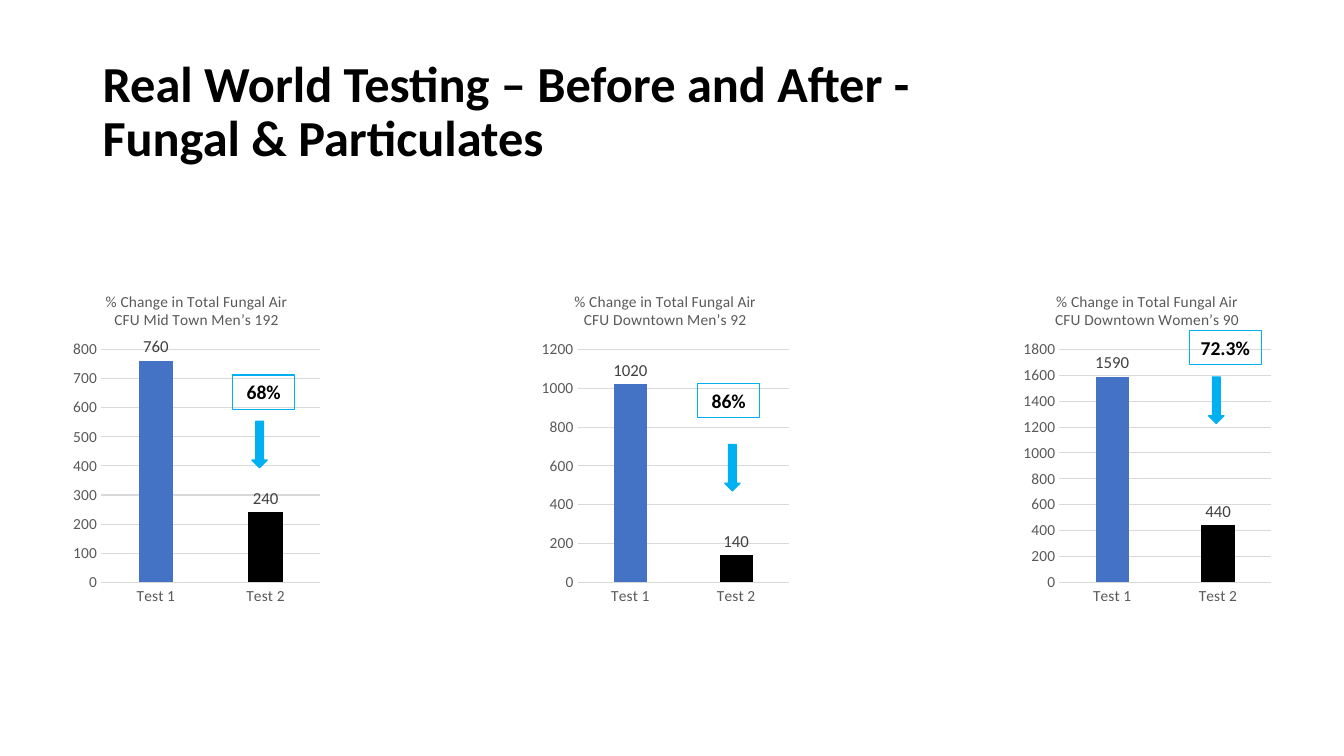
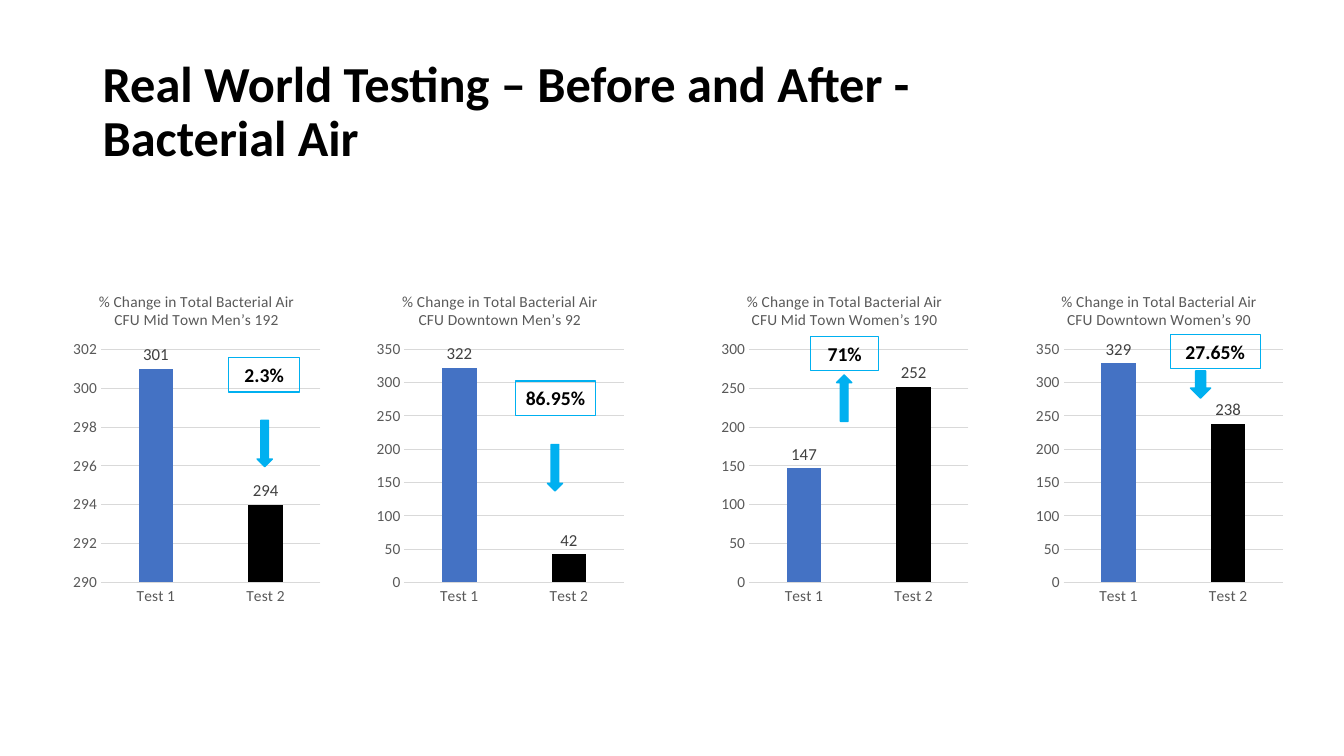
from dataclasses import dataclass

from lxml.etree import SubElement
from pptx import Presentation
from pptx.chart.data import CategoryChartData
from pptx.dml.color import RGBColor
from pptx.enum.chart import XL_CHART_TYPE, XL_LABEL_POSITION, XL_TICK_MARK
from pptx.enum.shapes import MSO_SHAPE
from pptx.enum.text import MSO_ANCHOR, PP_ALIGN
from pptx.oxml.ns import qn
from pptx.util import Inches, Pt

SLIDE_WIDTH, SLIDE_HEIGHT = Inches(13.33), Inches(7.5)
FONT = "Calibri"
BLACK = RGBColor(0x00, 0x00, 0x00)
BLUE = RGBColor(0x44, 0x72, 0xC4)
CYAN = RGBColor(0x00, 0xB0, 0xF0)
GRAY = RGBColor(0x59, 0x59, 0x59)
DARK_GRAY = RGBColor(0x40, 0x40, 0x40)
GRID_GRAY = RGBColor(0xD9, 0xD9, 0xD9)

CHART_TOP, CHART_WIDTH, CHART_HEIGHT = 36.4, 19.2, 44.67
BADGE_HEIGHT = 4.53


@dataclass
class Test:
    """One before-and-after chart; places are percentages of the slide."""

    site: str
    left: float
    counts: tuple
    scale: tuple
    change: str
    badge: tuple
    arrow: tuple
    arrow_size: tuple = (1.13, 6.13)
    rising: bool = False


FUNGAL = (
    Test("Mid Town Men’s 192", 5.03, (760, 240), (0, 800, 100),
         "68%", (17.33, 49.6, 4.58), (18.75, 55.73)),
    Test("Downtown Men’s 92", 39.9, (1020, 140), (0, 1200, 200),
         "86%", (51.9, 50.67, 4.65), (53.93, 58.8)),
    Test("Downtown Women’s 90", 75.75, (1590, 440), (0, 1800, 200),
         "72.3%", (88.5, 43.73, 5.33), (89.93, 49.87)),
)
BACTERIAL = (
    Test("Mid Town Men’s 192", 5.03, (301, 294), (290, 302, 2),
         "2.3%", (17.03, 47.33, 5.25), (19.13, 55.6)),
    Test("Downtown Men’s 92", 27.6, (322, 42), (0, 350, 50),
         "86.95%", (38.33, 50.4, 6), (40.73, 58.8)),
    Test("Mid Town Women’s 190", 53.25, (147, 252), (0, 300, 50),
         "71%", (60.3, 44.53, 5.1), (62.25, 49.6), rising=True),
    Test("Downtown Women’s 90", 76.65, (329, 238), (0, 350, 50),
         "27.65%", (87.08, 44.27, 6.68), (88.58, 49.07), (1.5, 3.6)),
)
SLIDES = (
    ("Fungal & Particulates", "Fungal", FUNGAL),
    ("Bacterial Air", "Bacterial", BACTERIAL),
)


def area(left, top, width, height):
    """Turn percentages of the slide into lengths."""
    return (int(SLIDE_WIDTH * left / 100), int(SLIDE_HEIGHT * top / 100),
            int(SLIDE_WIDTH * width / 100), int(SLIDE_HEIGHT * height / 100))


def set_all(target, values):
    """Set each named attribute of the target."""
    for name, value in values.items():
        setattr(target, name, value)


def style_font(font, size, color, bold=False):
    """Give a font the deck's typeface, a size and a colour."""
    set_all(font, {"name": FONT, "size": Pt(size), "bold": bold})
    font.color.rgb = color


def style_line(line, color, width):
    """Give a line its colour and width."""
    line.color.rgb = color
    line.width = Pt(width)


def add_title(slide, topic):
    """Write the slide's heading."""
    heading = slide.shapes.add_textbox(*area(6.9, 5.33, 69, 19.33)).text_frame
    set_all(heading, {"word_wrap": True, "vertical_anchor": MSO_ANCHOR.MIDDLE})
    line = heading.paragraphs[0]
    line.text = f"Real World Testing – Before and After - {topic}"
    line.line_spacing = 0.9
    style_font(line.font, 36, BLACK, True)


def fix_plot_area(chart, left):
    """Pin the inner plot area, in shares of the chart."""
    plot_area = chart.plots[0]._element.getparent()
    for old in plot_area.findall(qn("c:layout")):
        plot_area.remove(old)
    layout = SubElement(plot_area, qn("c:layout"))
    plot_area.insert(0, layout)
    manual = SubElement(layout, qn("c:manualLayout"))
    settings = {"layoutTarget": "inner", "xMode": "edge", "yMode": "edge",
                "x": left, "y": 0.22, "w": round(0.98 - left, 2), "h": 0.69}
    for tag, value in settings.items():
        SubElement(manual, qn(f"c:{tag}")).set("val", str(value))


def style_axes(chart, scale):
    """Format both axes and set the value scale."""
    categories, values = chart.category_axis, chart.value_axis
    for axis in (categories, values):
        set_all(axis, {"major_tick_mark": XL_TICK_MARK.NONE,
                       "minor_tick_mark": XL_TICK_MARK.NONE})
        style_font(axis.tick_labels.font, 11, GRAY)
    low, high, step = scale
    set_all(values, {"minimum_scale": low, "maximum_scale": high,
                     "major_unit": step, "has_major_gridlines": True})
    style_line(categories.format.line, GRID_GRAY, 0.75)
    style_line(values.major_gridlines.format.line, GRID_GRAY, 0.75)
    values.format.line.fill.background()


def style_bars(plot):
    """Colour the two bars and label them with their counts."""
    set_all(plot, {"gap_width": 219, "overlap": -27, "vary_by_categories": False})
    series = plot.series[0]
    for fill, color in ((series.format.fill, BLUE),
                        (series.points[1].format.fill, BLACK)):
        fill.solid()
        fill.fore_color.rgb = color
    labels = series.data_labels
    set_all(labels, {"show_value": True, "position": XL_LABEL_POSITION.OUTSIDE_END})
    style_font(labels.font, 12, DARK_GRAY)


def add_test_chart(slide, kind, test):
    """Draw the column chart of one site."""
    data = CategoryChartData()
    data.categories = ("Test 1", "Test 2")
    data.add_series("Series 1", test.counts)
    place = area(test.left, CHART_TOP, CHART_WIDTH, CHART_HEIGHT)
    chart = slide.shapes.add_chart(XL_CHART_TYPE.COLUMN_CLUSTERED, *place, data).chart
    style_font(chart.font, 10, BLACK)
    set_all(chart, {"has_legend": False, "has_title": True})
    caption = chart.chart_title.text_frame
    caption.text = f"% Change in Total {kind} Air\nCFU {test.site}"
    for line in caption.paragraphs:
        style_font(line.font, 11, GRAY)
    chart.chart_title.include_in_layout = False
    style_axes(chart, test.scale)
    style_bars(chart.plots[0])
    fix_plot_area(chart, 0.16 if test.scale[1] >= 1000 else 0.13)


def add_arrow(slide, test):
    """Draw the arrow that shows the direction of change."""
    arrow = slide.shapes.add_shape(MSO_SHAPE.DOWN_ARROW,
                                   *area(*test.arrow, *test.arrow_size))
    arrow.shadow.inherit = False
    arrow.rotation = 180 if test.rising else 0
    arrow.fill.solid()
    arrow.fill.fore_color.rgb = CYAN
    style_line(arrow.line, CYAN, 1)


def add_badge(slide, test):
    """Draw the outlined box with the percentage of change."""
    badge = slide.shapes.add_shape(MSO_SHAPE.RECTANGLE,
                                   *area(*test.badge, BADGE_HEIGHT))
    badge.shadow.inherit = False
    badge.fill.background()
    style_line(badge.line, CYAN, 0.75)
    set_all(badge.text_frame, {"word_wrap": True, "margin_left": 0, "margin_right": 0,
                               "vertical_anchor": MSO_ANCHOR.MIDDLE})
    change = badge.text_frame.paragraphs[0]
    set_all(change, {"text": test.change, "alignment": PP_ALIGN.CENTER})
    style_font(change.font, 14, BLACK, True)


def main():
    """Build and save the deck."""
    deck = Presentation()
    set_all(deck, {"slide_width": SLIDE_WIDTH, "slide_height": SLIDE_HEIGHT})
    for topic, kind, tests in SLIDES:
        slide = deck.slides.add_slide(deck.slide_layouts[6])
        add_title(slide, topic)
        for test in tests:
            add_test_chart(slide, kind, test)
            add_arrow(slide, test)
            add_badge(slide, test)
    deck.save("out.pptx")


if __name__ == "__main__":
    main()
